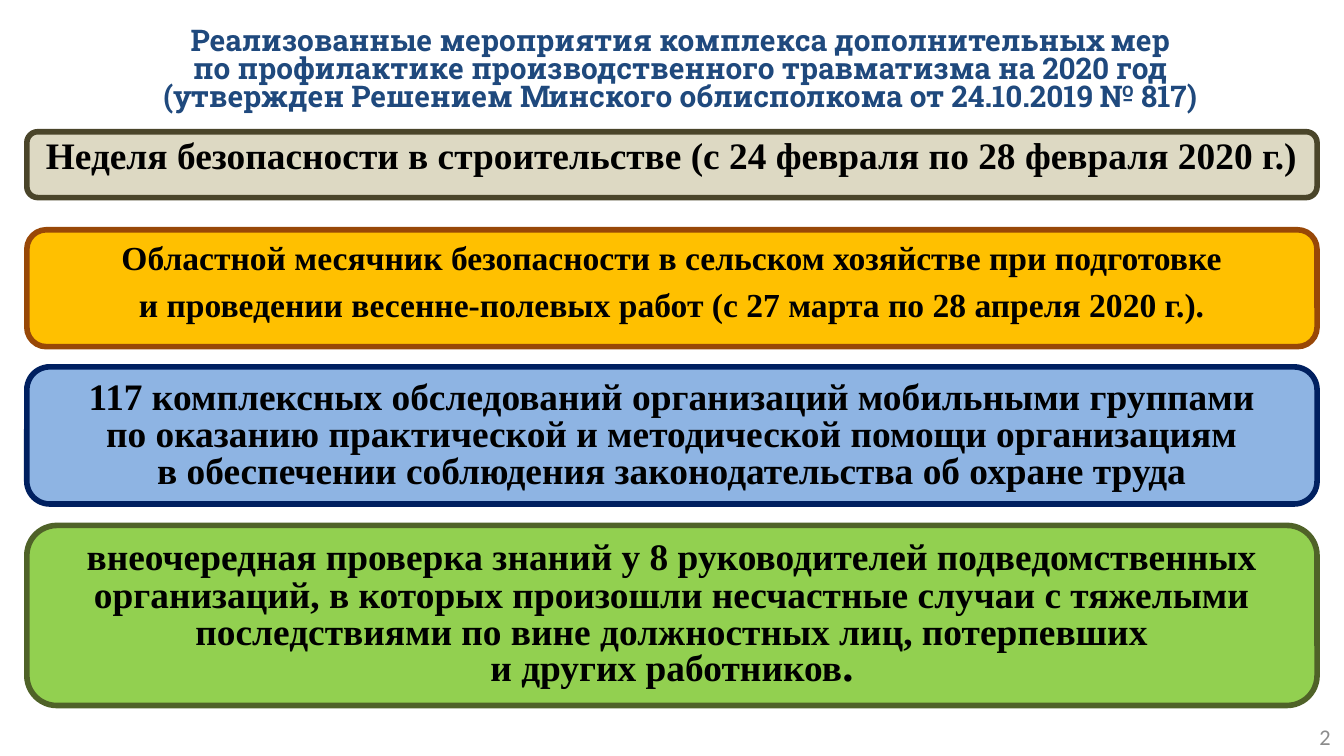
"""Build the slide on measures taken to prevent workplace injuries."""
from pptx import Presentation
from pptx.dml.color import RGBColor
from pptx.enum.shapes import MSO_SHAPE
from pptx.enum.text import MSO_ANCHOR, MSO_AUTO_SIZE, PP_ALIGN
from pptx.util import Inches, Pt

THEME = {
    "title": {"face": "Roboto Slab", "color": "1F497D", "size": 16, "bold": True},
    "body": {"face": "Times New Roman", "color": "000000", "bold": True},
    "page": {"face": "Calibri", "color": "8C8C8C", "size": 12, "bold": False},
    "sand": ("DDD9C3", "4A452A"),
    "gold": ("FFC000", "984807"),
    "blue": ("8EB4E3", "002060"),
    "green": ("92D050", "4F6228"),
    "border": 3,
    "stop": 24,
}

TITLE = (
    "Реализованные мероприятия комплекса дополнительных мер\n"
    "по профилактике производственного травматизма на 2020 год\n"
    "(утвержден Решением Минского облисполкома от 24.10.2019 № 817)"
)
PAGE = "2"
CARDS = [
    {"tone": "sand", "top": 0.98, "high": 0.49, "size": 20, "lead": 19, "text": [
        "Неделя безопасности в строительстве (с 24 февраля по 28 февраля 2020 г.)"]},
    {"tone": "gold", "top": 1.71, "high": 0.87, "size": 18, "lead": 19, "text": [
        "Областной месячник безопасности в сельском хозяйстве при подготовке",
        "и проведении весенне-полевых работ (с 27 марта по 28 апреля 2020 г.)."]},
    {"tone": "blue", "top": 2.73, "high": 1.02, "size": 20, "lead": 20, "text": [
        "117 комплексных обследований организаций мобильными группами\n"
        "по оказанию практической и методической помощи организациям\n"
        "в обеспечении соблюдения законодательства об охране труда"]},
    {"tone": "green", "top": 3.91, "high": 1.34, "size": 20, "lead": 20, "stop": ".", "text": [
        "внеочередная проверка знаний у 8 руководителей подведомственных "
        "организаций, в которых произошли несчастные случаи с тяжелыми "
        "последствиями по вине должностных лиц, потерпевших\n"
        "и других работников"]},
]
LEFT, WIDE = 0.2, 9.6


def style(para, face, color, size, bold, align=PP_ALIGN.CENTER, lead=None, gap=0):
    para.alignment = align
    para.space_before = para.space_after = Pt(gap)
    if lead:
        para.line_spacing = Pt(lead)
    font = para.font
    font.name, font.size, font.bold = face, Pt(size), bold
    font.color.rgb = RGBColor.from_string(color)


def add_title(slide):
    title = slide.shapes.title
    title.left, title.top = Inches(0.33), Inches(0.17)
    title.width, title.height = Inches(9.47), Inches(0.69)
    frame = title.text_frame
    frame.auto_size = MSO_AUTO_SIZE.NONE
    frame.vertical_anchor = MSO_ANCHOR.TOP
    para = frame.paragraphs[0]
    para.text = TITLE
    style(para, **THEME["title"], lead=15)


def add_card(slide, card):
    shape = slide.shapes.add_shape(
        MSO_SHAPE.FLOWCHART_ALTERNATE_PROCESS,
        Inches(LEFT), Inches(card["top"]), Inches(WIDE), Inches(card["high"]))
    fill, edge = THEME[card["tone"]]
    shape.shadow.inherit = False
    shape.fill.solid()
    shape.fill.fore_color.rgb = RGBColor.from_string(fill)
    shape.line.color.rgb = RGBColor.from_string(edge)
    shape.line.width = Pt(THEME["border"])
    frame = shape.text_frame
    frame.word_wrap = True
    frame.vertical_anchor = MSO_ANCHOR.TOP
    for i, text in enumerate(card["text"]):
        para = frame.add_paragraph() if i else frame.paragraphs[0]
        para.text = text
        style(para, **THEME["body"], size=card["size"], lead=card["lead"], gap=3)
    if "stop" in card:
        run = para.add_run()
        run.text = card["stop"]
        run.font.size = Pt(THEME["stop"])


def add_page(slide):
    box = slide.shapes.add_textbox(Inches(7.67), Inches(5.33), Inches(2.33), Inches(0.3))
    frame = box.text_frame
    frame.word_wrap = True
    frame.vertical_anchor = MSO_ANCHOR.MIDDLE
    para = frame.paragraphs[0]
    para.text = PAGE
    style(para, **THEME["page"], align=PP_ALIGN.RIGHT)


def main():
    deck = Presentation()
    deck.slide_width = Inches(10)
    deck.slide_height = deck.slide_width * 9 // 16
    slide = deck.slides.add_slide(deck.slide_layouts[5])
    add_page(slide)
    add_title(slide)
    for card in CARDS:
        add_card(slide, card)
    deck.save("out.pptx")


if __name__ == "__main__":
    main()
